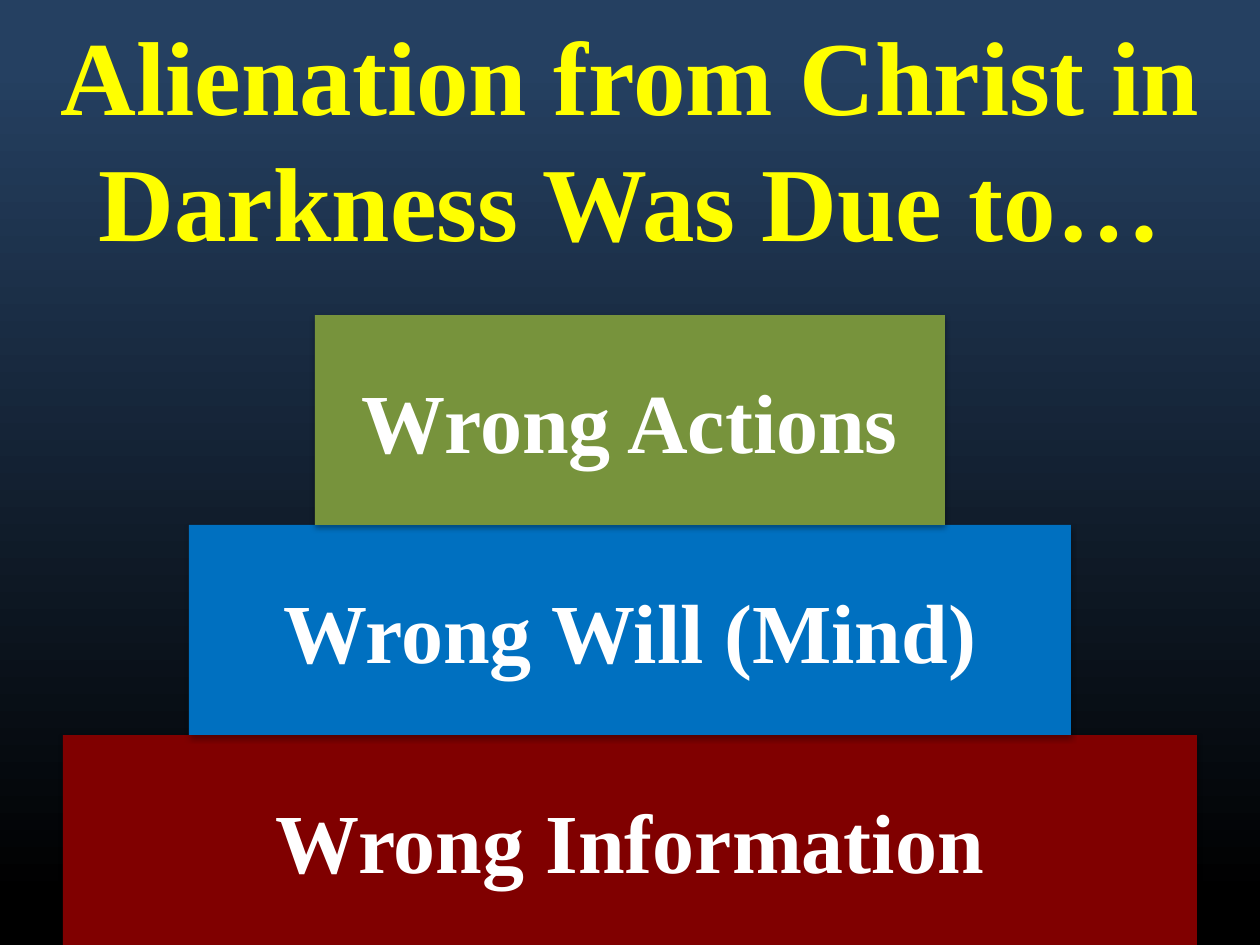
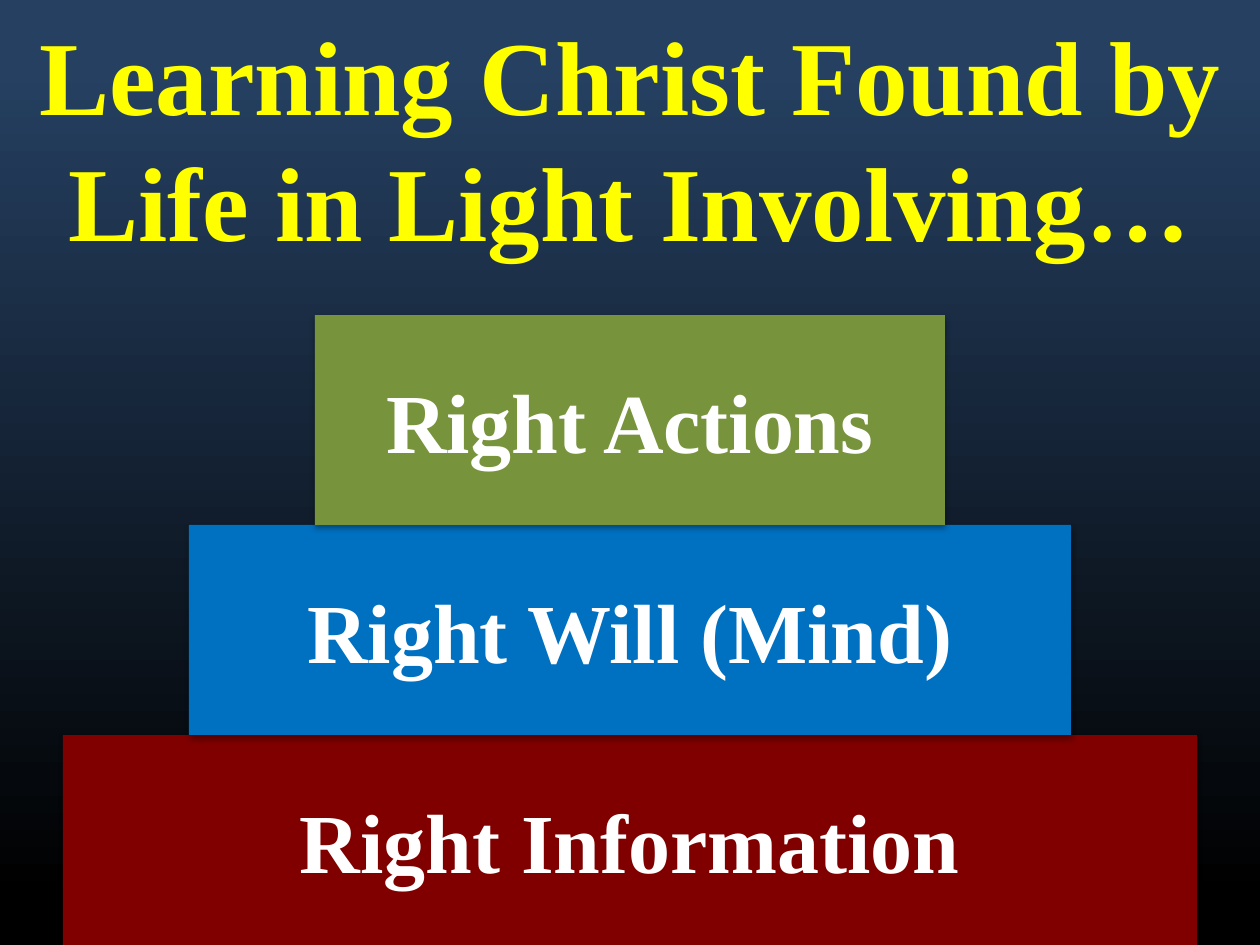
from dataclasses import dataclass

from lxml.etree import SubElement
from pptx import Presentation
from pptx.dml.color import RGBColor
from pptx.enum.shapes import MSO_SHAPE
from pptx.enum.text import MSO_ANCHOR as Anchor, PP_ALIGN as Align
from pptx.oxml.ns import qn
from pptx.util import Pt


@dataclass(frozen=True)
class Theme:
    font: str = "Times New Roman"
    background: tuple = ((0.07, "254061"), (0.95, "000000"))
    title_color: str = "FFFF00"
    step_color: str = "FFFFFF"
    step_fills: tuple = ("800000", "0070C0", "77933C")
    shadow_color: str = "000000"
    title_size: int = 60
    step_size: int = 48


class Deck:
    """Builds slides that stack coloured steps under a title."""

    width, height = 720, 540
    title_height = 156
    step_height = 120
    base_width = 648
    narrowing = 144

    def __init__(self, theme):
        self.theme = theme
        self.presentation = Presentation()
        self.presentation.slide_width = Pt(self.width)
        self.presentation.slide_height = Pt(self.height)
        self.slide = None

    def add_slide(self):
        self.slide = self.presentation.slides.add_slide(self.presentation.slide_layouts[6])
        fill = self.slide.background.fill
        fill.gradient()
        fill.gradient_angle = 270
        for stop, (position, color) in zip(fill.gradient_stops, self.theme.background):
            stop.position = position
            stop.color.rgb = RGBColor.from_string(color)

    def set_text(self, shape, text, size, color):
        text_frame = shape.text_frame
        text_frame.text = text
        text_frame.word_wrap = True
        text_frame.vertical_anchor = Anchor.MIDDLE
        paragraph = text_frame.paragraphs[0]
        paragraph.alignment = Align.CENTER
        font = paragraph.runs[0].font
        font.name = self.theme.font
        font.size = Pt(size)
        font.bold = True
        font.color.rgb = RGBColor.from_string(color)

    def add_title(self, text):
        box = self.slide.shapes.add_textbox(0, 0, Pt(self.width), Pt(self.title_height))
        self.set_text(box, text, self.theme.title_size, self.theme.title_color)

    def add_shadow(self, shape):
        shape.shadow.inherit = False
        effects = shape._element.spPr.find(qn("a:effectLst"))
        shadow = SubElement(effects, qn("a:outerShdw"), blurRad=str(Pt(3.1)),
                            dist=str(Pt(1.8)), dir="5400000", rotWithShape="0")
        color = SubElement(shadow, qn("a:srgbClr"), val=self.theme.shadow_color)
        SubElement(color, qn("a:alpha"), val="35000")

    def add_step(self, level, text):
        width = self.base_width - level * self.narrowing
        shape = self.slide.shapes.add_shape(
            MSO_SHAPE.RECTANGLE, Pt((self.width - width) / 2),
            Pt(self.height - (level + 1) * self.step_height), Pt(width), Pt(self.step_height))
        shape.fill.solid()
        shape.fill.fore_color.rgb = RGBColor.from_string(self.theme.step_fills[level])
        shape.line.fill.background()
        self.add_shadow(shape)
        self.set_text(shape, text, self.theme.step_size, self.theme.step_color)


def main():
    deck = Deck(Theme())
    slides = (
        ("Alienation from Christ in Darkness Was Due to…", "Wrong"),
        ("Learning Christ Found by Life in Light Involving…", "Right"),
    )
    for title, quality in slides:
        deck.add_slide()
        deck.add_title(title)
        for level, subject in enumerate(("Information", "Will (Mind)", "Actions")):
            deck.add_step(level, f"{quality} {subject}")
    deck.presentation.save("out.pptx")


if __name__ == "__main__":
    main()
